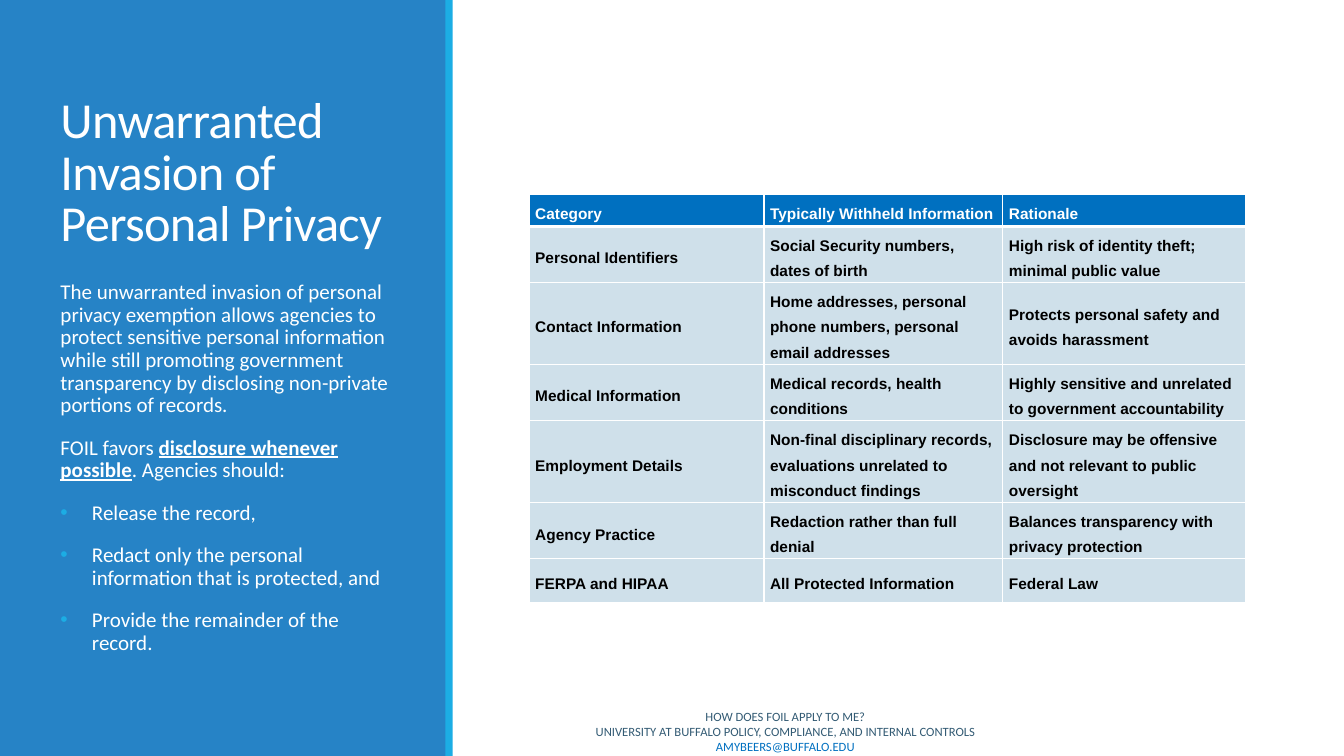
from dataclasses import dataclass

import pptx
import pptx.dml.color
import pptx.enum.shapes
import pptx.enum.text
import pptx.oxml
import pptx.oxml.ns
import pptx.util
from pptx.dml.color import RGBColor
from pptx.enum.text import MSO_ANCHOR, PP_ALIGN
from pptx.util import Pt

WHITE = RGBColor(0xFF, 0xFF, 0xFF)
BLACK = RGBColor(0x00, 0x00, 0x00)
PANEL_BLUE = RGBColor(0x26, 0x83, 0xC6)
ACCENT_CYAN = RGBColor(0x1C, 0xAD, 0xE4)
HEADER_BLUE = RGBColor(0x00, 0x70, 0xC0)
ROW_BLUE = RGBColor(0xCF, 0xE0, 0xEA)
FOOTER_SLATE = RGBColor(0x33, 0x5B, 0x74)

BULLET_INDENT = 22.5
THIN_BORDER, THICK_BORDER = 0.9, 2.7


@dataclass(frozen=True)
class Box:
    left: float
    top: float
    width: float
    height: float

    def lengths(self) -> tuple:
        return Pt(self.left), Pt(self.top), Pt(self.width), Pt(self.height)


@dataclass(frozen=True)
class Band:
    box: Box
    color: RGBColor


@dataclass(frozen=True)
class TextRun:
    text: str
    color: RGBColor = WHITE
    emphasis: bool = False


@dataclass(frozen=True)
class BodyParagraph:
    runs: tuple
    bulleted: bool = False


BANDS = (
    Band(Box(0, 0, 319, 540), PANEL_BLUE),
    Band(Box(318.24, 0, 5.04, 540), ACCENT_CYAN),
)
TITLE_BOX = Box(36, 46.8, 252, 136.8)
BODY_BOX = Box(36, 197.28, 252, 298.8)
FOOTER_BOX = Box(378, 508.32, 365.76, 28.8)
TABLE_BOX = Box(378, 139.2, 511.92, 282.24)

BODY = (
    BodyParagraph((TextRun(
        "The unwarranted invasion of personal privacy exemption allows agencies to "
        "protect sensitive personal information while still promoting government "
        "transparency by disclosing non-private portions of records."),)),
    BodyParagraph((
        TextRun("FOIL favors "),
        TextRun("disclosure whenever possible", emphasis=True),
        TextRun(". Agencies should:"))),
    BodyParagraph((TextRun("Release the record,"),), True),
    BodyParagraph((TextRun("Redact only the personal information that is protected, and"),), True),
    BodyParagraph((TextRun("Provide the remainder of the record."),), True),
)
FOOTER = (
    (TextRun("HOW DOES FOIL APPLY TO ME?", FOOTER_SLATE),),
    (TextRun("UNIVERSITY AT BUFFALO POLICY, COMPLIANCE, AND INTERNAL CONTROLS ", FOOTER_SLATE),
     TextRun("AMYBEERS@BUFFALO.EDU", HEADER_BLUE)),
)
COLUMN_WIDTHS = (167.76, 170.64, 173.52)
ROW_HEIGHTS = (18.72, 30.96, 43.92, 30.96, 43.92, 30.96, 30.96)
TABLE_ROWS = (
    ("Category", "Typically Withheld Information", "Rationale"),
    ("Personal Identifiers", "Social Security numbers, dates of birth",
     "High risk of identity theft; minimal public value"),
    ("Contact Information", "Home addresses, personal phone numbers, personal email addresses",
     "Protects personal safety and avoids harassment"),
    ("Medical Information", "Medical records, health conditions",
     "Highly sensitive and unrelated to government accountability"),
    ("Employment Details",
     "Non-final disciplinary records, evaluations unrelated to misconduct findings",
     "Disclosure may be offensive and not relevant to public oversight"),
    ("Agency Practice", "Redaction rather than full denial",
     "Balances transparency with privacy protection"),
    ("FERPA and HIPAA", "All Protected Information", "Federal Law"),
)


def add_element(parent, xml: str) -> None:
    namespace = pptx.oxml.ns.nsdecls("a")
    parent.append(pptx.oxml.parse_xml(xml.replace(">", f" {namespace}>", 1)))


def place(shape, box: Box) -> None:
    shape.left, shape.top, shape.width, shape.height = box.lengths()


def add_run(paragraph, content: TextRun, size: float, font_name: str = "Calibri"):
    run = paragraph.add_run()
    run.text = content.text
    run.font.size = Pt(size)
    run.font.name = font_name
    run.font.color.rgb = content.color
    run.font.bold = content.emphasis
    return run


def add_band(slide, band: Band, depth: int) -> None:
    shape = slide.shapes.add_shape(pptx.enum.shapes.MSO_SHAPE.RECTANGLE, *band.box.lengths())
    shape.shadow.inherit = False
    shape.fill.solid()
    shape.fill.fore_color.rgb = band.color
    shape.line.fill.background()
    # Send behind the placeholders, after the two group property elements
    shape.element.getparent().insert(2 + depth, shape.element)


def fill_title(title) -> None:
    place(title, TITLE_BOX)
    frame = title.text_frame
    frame.auto_size = pptx.enum.text.MSO_AUTO_SIZE.NONE
    frame.vertical_anchor = MSO_ANCHOR.BOTTOM
    paragraph = frame.paragraphs[0]
    paragraph.alignment = PP_ALIGN.LEFT
    paragraph.line_spacing = 0.85
    run = add_run(paragraph, TextRun("Unwarranted Invasion of Personal Privacy"), 36)
    run.font.element.set("spc", "-50") if hasattr(run.font, "element") else \
        run._r.get_or_add_rPr().set("spc", "-50")


def fill_body(body) -> None:
    place(body, BODY_BOX)
    frame = body.text_frame
    frame.auto_size = pptx.enum.text.MSO_AUTO_SIZE.NONE
    for index, content in enumerate(BODY):
        paragraph = frame.add_paragraph() if index else frame.paragraphs[0]
        paragraph.line_spacing = 0.9
        paragraph.space_before = Pt(12 if index else 0)
        paragraph.space_after = Pt(2)
        properties = paragraph._p.get_or_add_pPr()
        indent = Pt(BULLET_INDENT) if content.bulleted else 0
        properties.set("marL", str(indent))
        properties.set("indent", str(-indent))
        if content.bulleted:
            add_element(properties, f'<a:buClr><a:srgbClr val="{ACCENT_CYAN}"/></a:buClr>')
            add_element(properties, '<a:buFont typeface="Arial"></a:buFont>')
            add_element(properties, '<a:buChar char="•"></a:buChar>')
        else:
            add_element(properties, "<a:buNone></a:buNone>")
        for text_run in content.runs:
            run = add_run(paragraph, text_run, 15)
            run.font.underline = text_run.emphasis


def add_footer(slide) -> None:
    frame = slide.shapes.add_textbox(*FOOTER_BOX.lengths()).text_frame
    frame.word_wrap = True
    frame.vertical_anchor = MSO_ANCHOR.MIDDLE
    for index, text_runs in enumerate(FOOTER):
        paragraph = frame.add_paragraph() if index else frame.paragraphs[0]
        paragraph.alignment = PP_ALIGN.CENTER
        for text_run in text_runs:
            add_run(paragraph, text_run, 9)


def format_cell(cell, text: str, row: int) -> None:
    cell.vertical_anchor = MSO_ANCHOR.MIDDLE
    cell.margin_left = cell.margin_right = Pt(4.32)
    cell.margin_top = cell.margin_bottom = Pt(2.16)
    thick_side = {0: "B", 1: "T"}.get(row)
    for side in "LRTB":
        width = Pt(THICK_BORDER if side == thick_side else THIN_BORDER)
        add_element(cell._tc.get_or_add_tcPr(),
                    f'<a:ln{side} w="{width}"><a:solidFill><a:srgbClr val="{WHITE}"/>'
                    f"</a:solidFill></a:ln{side}>")
    cell.fill.solid()
    cell.fill.fore_color.rgb = ROW_BLUE if row else HEADER_BLUE
    paragraph = cell.text_frame.paragraphs[0]
    paragraph.line_spacing = Pt(18)
    add_run(paragraph, TextRun(text, BLACK if row else WHITE, True), 11, "Arial")


def add_privacy_table(slide) -> None:
    table = slide.shapes.add_table(
        len(TABLE_ROWS), len(COLUMN_WIDTHS), *TABLE_BOX.lengths()).table
    for column, width in zip(table.columns, COLUMN_WIDTHS):
        column.width = Pt(width)
    for row, (height, texts) in enumerate(zip(ROW_HEIGHTS, TABLE_ROWS)):
        table.rows[row].height = Pt(height)
        for column, text in enumerate(texts):
            format_cell(table.cell(row, column), text, row)


def main() -> None:
    presentation = pptx.Presentation()
    presentation.slide_width, presentation.slide_height = Pt(960), Pt(540)
    slide = presentation.slides.add_slide(presentation.slide_layouts[1])
    # Left panel
    for depth, band in enumerate(BANDS):
        add_band(slide, band, depth)
    fill_title(slide.shapes.title)
    fill_body(slide.placeholders[1])
    # Footer and table
    add_footer(slide)
    add_privacy_table(slide)
    presentation.save("out.pptx")


if __name__ == "__main__":
    main()
